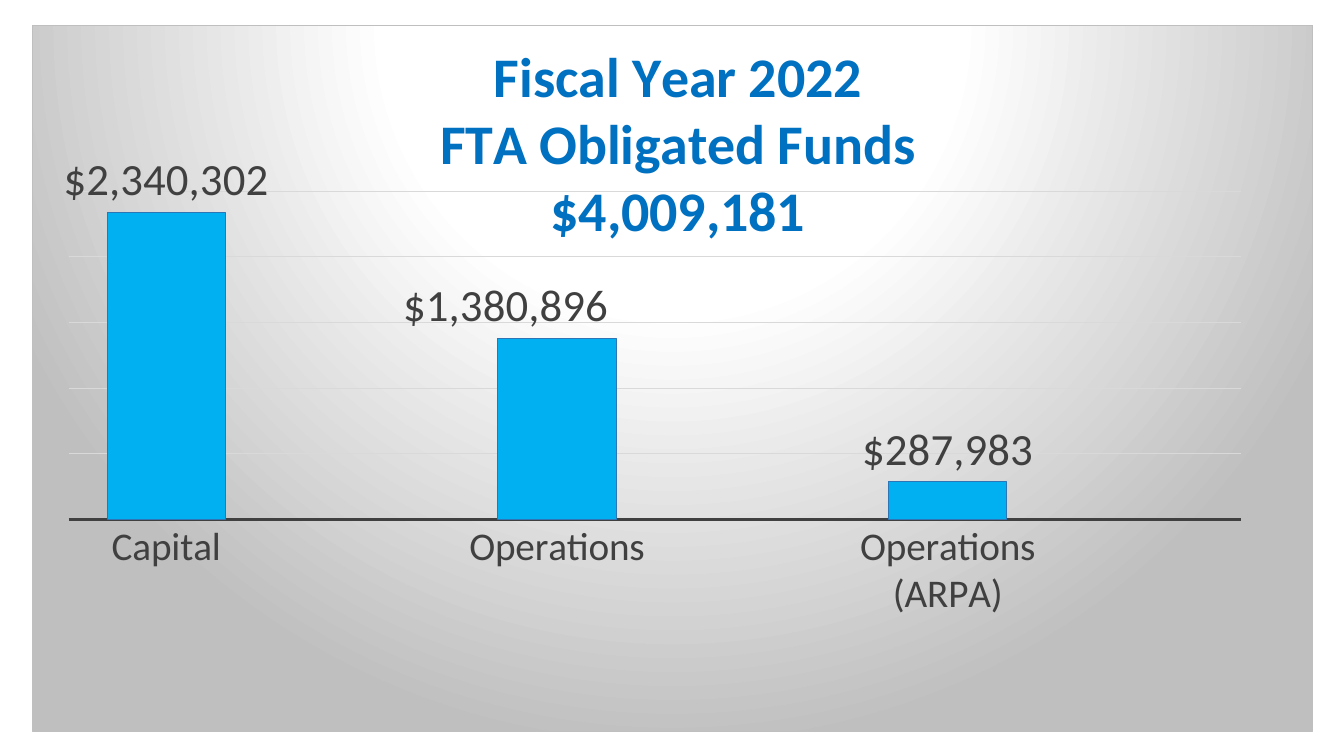
"""Build a slide with a column chart of obligated transit funds."""
import pptx
import pptx.chart.data
import pptx.dml.color
import pptx.enum.chart
import pptx.oxml
import pptx.oxml.ns
import pptx.util

SLIDE_WIDTH = pptx.util.Inches(13.33)
SLIDE_HEIGHT = pptx.util.Inches(7.5)
CHART_FRAME = (0.024, 0.033, 0.953, 0.935)
PLOT_FRAME = {"x": 0.028, "y": 0.235, "w": 0.916, "h": 0.465}
TITLE_OFFSET = {"x": 0.316, "y": 0.02}
OPERATIONS_LABEL_SHIFT = {"x": -0.04, "y": 0}

TITLE_BLUE = pptx.dml.color.RGBColor(0x00, 0x70, 0xC0)
COLUMN_BLUE = pptx.dml.color.RGBColor(0x00, 0xB0, 0xF0)
OUTLINE_BLUE = pptx.dml.color.RGBColor(0x2E, 0x75, 0xB6)
DARK_GRAY = pptx.dml.color.RGBColor(0x40, 0x40, 0x40)
GRID_GRAY = pptx.dml.color.RGBColor(0xD9, 0xD9, 0xD9)
BACKDROP_GRAY = pptx.dml.color.RGBColor(0xBF, 0xBF, 0xBF)
WHITE = pptx.dml.color.RGBColor(0xFF, 0xFF, 0xFF)

TITLE = "Fiscal Year 2022\nFTA Obligated Funds\n$4,009,181"
CATEGORIES = ("Capital", "", "Operations", "", "Operations (ARPA)", "")
FUNDS = (2340302, None, 1380896, None, 287983, None)
OPERATIONS_INDEX = 2
DOLLARS = '"$"#,##0'


def apply_format(target, values):
    """Set each named attribute of the target."""
    for name, value in values.items():
        setattr(target, name, value)


def format_font(font, size, color, bold=False):
    """Give a font its face, size, weight and colour."""
    apply_format(font, {"name": "Calibri", "size": pptx.util.Pt(size), "bold": bold})
    font.color.rgb = color


def format_line(line, color, width):
    """Give a line its colour and width in points."""
    line.color.rgb = color
    line.width = pptx.util.Pt(width)


def make_layout(places, inner=False):
    """Return a manual chart layout element."""
    target = '<c:layoutTarget val="inner"/>' if inner else ""
    modes = "".join(f'<c:{axis}Mode val="edge"/>' for axis in "xy") if inner or places is TITLE_OFFSET else ""
    sizes = "".join(f'<c:{name} val="{value}"/>' for name, value in places.items())
    return pptx.oxml.parse_xml(
        f'<c:layout {pptx.oxml.ns.nsdecls("c")}><c:manualLayout>'
        f"{target}{modes}{sizes}</c:manualLayout></c:layout>"
    )


def place_element(parent, layout):
    """Put a layout in its parent, replacing any earlier one."""
    for old_layout in parent.findall(pptx.oxml.ns.qn("c:layout")):
        parent.remove(old_layout)
    has_leader = len(parent) and parent[0].tag in map(pptx.oxml.ns.qn, ("c:idx", "c:tx"))
    parent.insert(1 if has_leader else 0, layout)


def fill_backdrop(chart):
    """Fill the chart area with a radial gradient and outline it."""
    stops = "".join(
        f'<a:gs pos="{share * 1000}"><a:srgbClr val="{color}"/></a:gs>'
        for share, color in ((0, WHITE), (39, WHITE), (100, BACKDROP_GRAY))
    )
    backdrop = pptx.oxml.parse_xml(
        f'<c:spPr {pptx.oxml.ns.nsdecls("c", "a")}><a:gradFill><a:gsLst>{stops}</a:gsLst>'
        '<a:path path="circle"><a:fillToRect l="50000" t="-80000" r="50000" b="180000"/></a:path>'
        f'</a:gradFill><a:ln w="{pptx.util.Pt(0.75)}"><a:solidFill>'
        f'<a:srgbClr val="{BACKDROP_GRAY}"/></a:solidFill></a:ln></c:spPr>'
    )
    chart.element.find(pptx.oxml.ns.qn("c:chart")).addnext(backdrop)


def add_funds_chart(slide):
    """Add the column chart and return it."""
    chart_data = pptx.chart.data.CategoryChartData(number_format=DOLLARS)
    chart_data.categories = CATEGORIES
    chart_data.add_series("Series 1", FUNDS)
    left, top, width, height = CHART_FRAME
    return slide.shapes.add_chart(
        pptx.enum.chart.XL_CHART_TYPE.COLUMN_CLUSTERED,
        int(left * SLIDE_WIDTH), int(top * SLIDE_HEIGHT),
        int(width * SLIDE_WIDTH), int(height * SLIDE_HEIGHT), chart_data,
    ).chart


def format_title(chart):
    """Write and place the chart title."""
    title = chart.chart_title
    title.text_frame.text = TITLE
    for paragraph in title.text_frame.paragraphs:
        for run in paragraph.runs:
            format_font(run.font, 40, TITLE_BLUE, bold=True)
    place_element(title._element, make_layout(TITLE_OFFSET))
    title.include_in_layout = True


def format_axes(chart):
    """Style the category axis, hide the value axis and draw its grid."""
    category_axis, value_axis = chart.category_axis, chart.value_axis
    no_marks = pptx.enum.chart.XL_TICK_MARK.NONE
    apply_format(category_axis, {"major_tick_mark": no_marks, "minor_tick_mark": no_marks})
    format_font(category_axis.tick_labels.font, 28, DARK_GRAY)
    format_line(category_axis.format.line, DARK_GRAY, 1.5)
    apply_format(value_axis, {
        "minimum_scale": 0, "maximum_scale": 2500000, "major_unit": 500000,
        "has_major_gridlines": True, "visible": False,
    })
    format_line(value_axis.major_gridlines.format.line, GRID_GRAY, 0.75)


def format_columns(chart):
    """Style the columns and their value labels."""
    plot = chart.plots[0]
    apply_format(plot, {"gap_width": 65, "vary_by_categories": False})
    series = plot.series[0]
    series.format.fill.solid()
    series.format.fill.fore_color.rgb = COLUMN_BLUE
    format_line(series.format.line, OUTLINE_BLUE, 0.75)
    outside = pptx.enum.chart.XL_LABEL_POSITION.OUTSIDE_END
    labels = series.data_labels
    apply_format(labels, {
        "show_value": True, "number_format": DOLLARS,
        "number_format_is_linked": False, "position": outside,
    })
    format_font(labels.font, 32, DARK_GRAY)
    operations_label = series.points[OPERATIONS_INDEX].data_label
    operations_label.position = outside
    format_font(operations_label.font, 32, DARK_GRAY)
    label_element = labels._element.find(pptx.oxml.ns.qn("c:dLbl"))
    place_element(label_element, make_layout(OPERATIONS_LABEL_SHIFT))


def main():
    """Build and save the presentation."""
    presentation = pptx.Presentation()
    apply_format(presentation, {"slide_width": SLIDE_WIDTH, "slide_height": SLIDE_HEIGHT})
    slide = presentation.slides.add_slide(presentation.slide_layouts[6])
    chart = add_funds_chart(slide)
    chart.has_legend = False
    chart.font.name = "Calibri"
    chart.font.size = pptx.util.Pt(10)
    format_title(chart)
    format_axes(chart)
    format_columns(chart)
    plot_area = chart.element.find(".//" + pptx.oxml.ns.qn("c:plotArea"))
    place_element(plot_area, make_layout(PLOT_FRAME, inner=True))
    fill_backdrop(chart)
    presentation.save("out.pptx")


if __name__ == "__main__":
    main()
